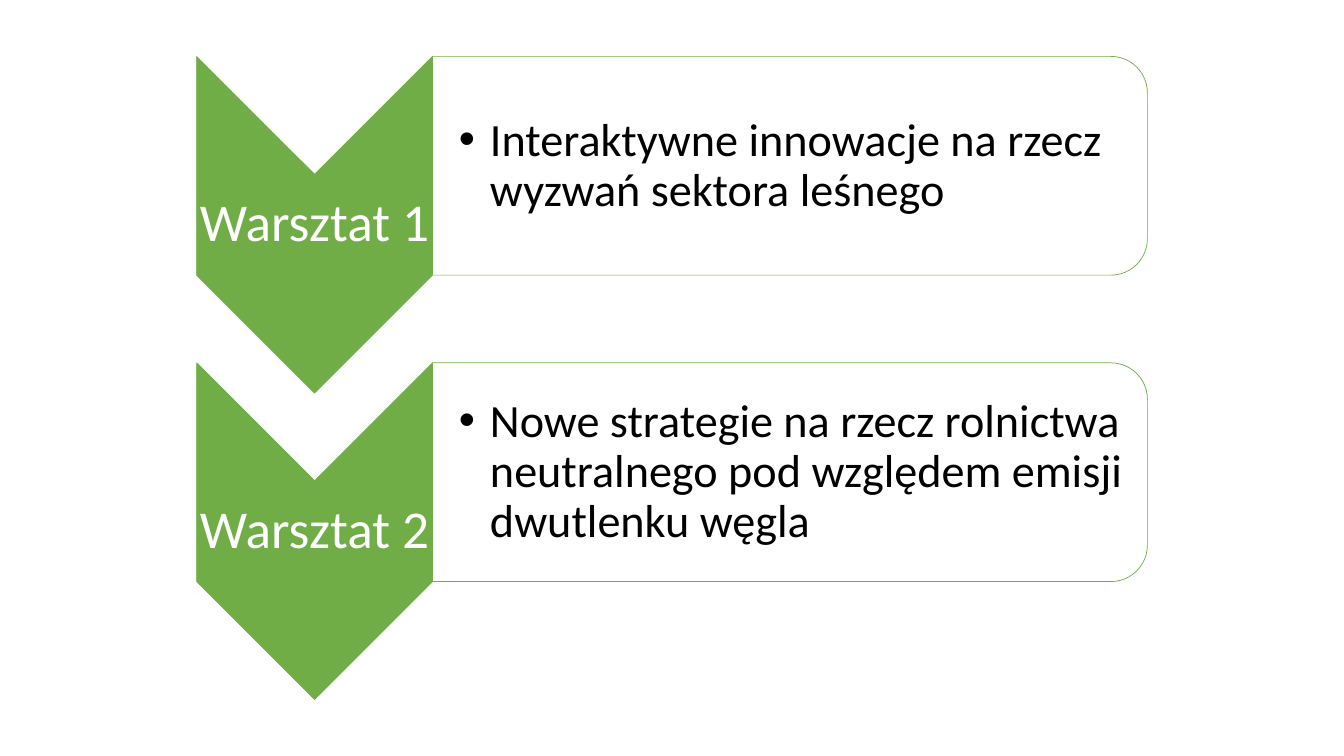
"""Builds a slide with two workshop chevrons, each beside its topic card."""
import pptx
import pptx.chart.data
import pptx.dml.color
import pptx.enum.shapes
import pptx.enum.text
import pptx.oxml
import pptx.oxml.ns
import pptx.util

Inches = pptx.util.Inches
Pt = pptx.util.Pt
RGB = pptx.dml.color.RGBColor
Kind = pptx.enum.shapes.MSO_SHAPE
Align = pptx.enum.text.PP_ALIGN

GREEN = RGB(0x70, 0xAD, 0x47)
WHITE = RGB(0xFF, 0xFF, 0xFF)
BLACK = RGB(0x00, 0x00, 0x00)
FONT = "Calibri"

TOP = 1.06
STEP = 3.04
TOPICS = [
    ("Warsztat 1", "Interaktywne innowacje na rzecz wyzwań sektora leśnego"),
    ("Warsztat 2", "Nowe strategie na rzecz rolnictwa neutralnego "
                   "pod względem emisji dwutlenku węgla"),
]


def write(frame, text, size, color, align=Align.LEFT, bullet=False, indent=0.31):
    para = frame.paragraphs[0]
    para.text = text
    if bullet:
        para.level = 1
        props = para._p.get_or_add_pPr()
        props.set("marL", str(Inches(indent)))
        props.set("indent", str(-Inches(indent)))
        space = pptx.oxml.ns.nsdecls("a")
        for tag in (f'<a:buFont {space} typeface="Arial"/>',
                    f'<a:buChar {space} char="•"/>'):
            props.append(pptx.oxml.parse_xml(tag))
    para.alignment = align
    para.line_spacing = 0.9
    para.font.name = FONT
    para.font.size = Pt(size)
    para.font.color.rgb = color


class Deck:
    def __init__(self):
        self.file = pptx.Presentation()
        self.file.slide_width = Inches(13.33)
        self.file.slide_height = Inches(7.5)
        self.slide = self.file.slides.add_slide(self.file.slide_layouts[6])

    def shape(self, kind, left, top, width, height, fill):
        item = self.slide.shapes.add_shape(
            kind, Inches(left), Inches(top), Inches(width), Inches(height))
        item.rotation = 90
        item.shadow.inherit = False
        item.fill.solid()
        item.fill.fore_color.rgb = fill
        item.line.color.rgb = GREEN
        item.line.width = Pt(0.5)

    def text(self, text, left, top, width, height, pad, inset, **style):
        box = self.slide.shapes.add_textbox(
            Inches(left), Inches(top), Inches(width), Inches(height))
        frame = box.text_frame
        frame.word_wrap = True
        frame.vertical_anchor = pptx.enum.text.MSO_ANCHOR.MIDDLE
        frame.margin_left = Inches(inset)
        frame.margin_top = frame.margin_right = frame.margin_bottom = Inches(pad)
        write(frame, text, **style)

    def topic(self, top, label, theme):
        self.shape(Kind.CHEVRON, 1.45, top, 3.34, 2.34, GREEN)
        self.text(label, 1.95, top + 0.67, 2.34, 1, 0.03, 0.03,
                  size=38, color=WHITE, align=Align.CENTER)
        self.shape(Kind.ROUND_2_SAME_RECTANGLE, 6.75, top - 2.96, 2.17, 7.09, WHITE)
        self.text(theme, 4.29, top - 0.39, 6.99, 1.96, 0.02, 0.26,
                  size=33, color=BLACK, bullet=True)


def main():
    deck = Deck()
    for row, (label, theme) in enumerate(TOPICS):
        deck.topic(TOP + row * STEP, label, theme)
    deck.file.save("out.pptx")


if __name__ == "__main__":
    main()
